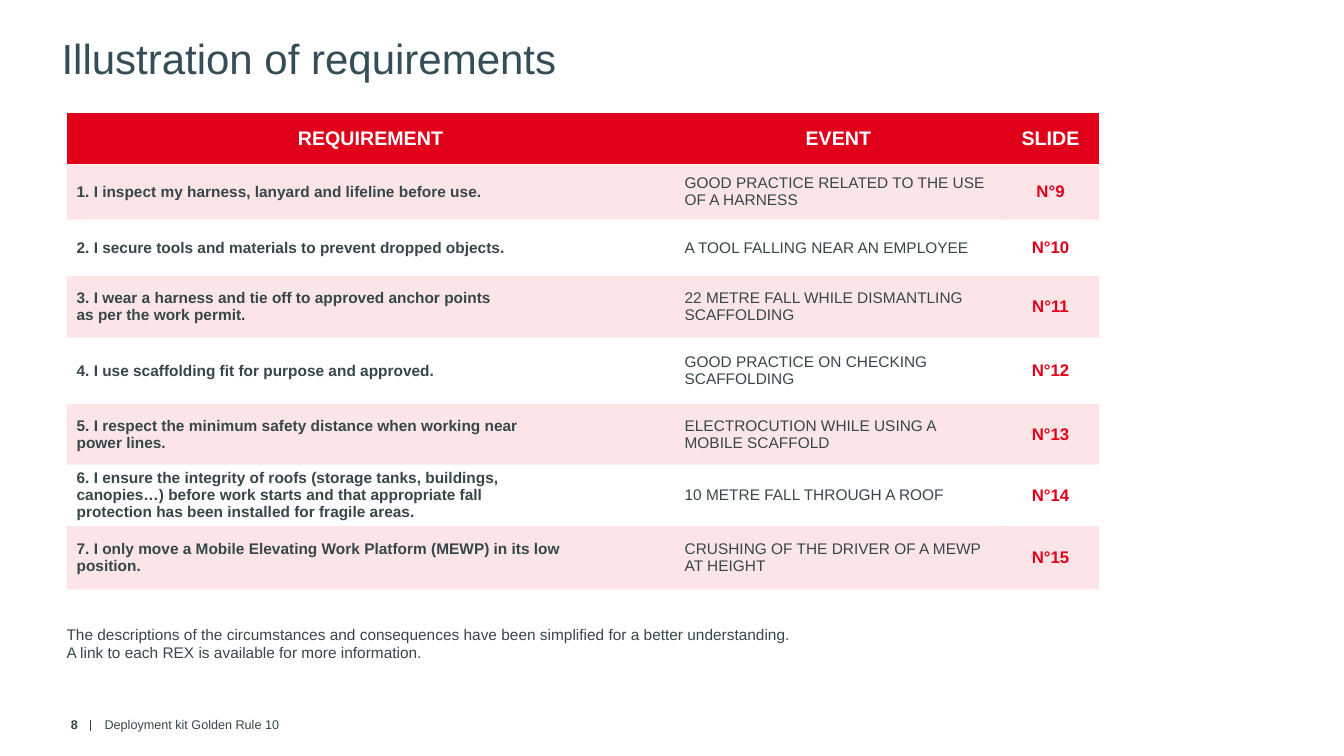
from dataclasses import dataclass

from lxml import etree
from pptx import Presentation, util as u
from pptx.dml.color import RGBColor
from pptx.enum import shapes, text
from pptx.oxml.ns import qn


@dataclass(frozen=True)
class Theme:
    """Colours, font and type sizes of the deck."""
    font: str = "Arial"
    red: str = "E1001A"
    ink: str = "374649"
    heading: str = "354D56"
    white: str = "FFFFFF"
    title: int = 30
    header: int = 14
    number: int = 12
    body: int = 11
    footer: int = 9
    tint: int = 10
    plain_table: str = "{2D5ABB26-0587-4C30-8999-92F81FD0307C}"


class SlideBuilder:
    """Draws styled elements on a slide, placed in percent of its size."""

    def __init__(self, prs, theme):
        """Add a title-only slide to the presentation."""
        self.prs, self.theme = prs, theme
        self.slide = prs.slides.add_slide(prs.slide_layouts[5])

    def x(self, share):
        """Turn a percentage of the slide's width into a length."""
        return u.Emu(round(self.prs.slide_width * share / 100))

    def y(self, share):
        """Turn a percentage of the slide's height into a length."""
        return u.Emu(round(self.prs.slide_height * share / 100))

    def box(self, left, top, width, height):
        """Turn four percentages into a position and a size."""
        return self.x(left), self.y(top), self.x(width), self.y(height)

    def set_text(self, tf, words, size, color, bold=False, align="LEFT"):
        """Fill a text frame with one paragraph per line of words."""
        for i, line in enumerate(words.split("\n")):
            p = tf.add_paragraph() if i else tf.paragraphs[0]
            p.alignment = text.PP_ALIGN[align]
            r = p.add_run()
            r.text = line
            for name, value in {"name": self.theme.font, "size": u.Pt(size), "bold": bold}.items():
                setattr(r.font, name, value)
            r.font.color.rgb = RGBColor.from_string(color)

    def title(self, words, area):
        """Place and fill the title placeholder."""
        sp = self.slide.shapes.title
        for name, value in zip(("left", "top", "width", "height"), self.box(*area)):
            setattr(sp, name, value)
        tf = sp.text_frame
        tf.auto_size = text.MSO_AUTO_SIZE.NONE
        tf.vertical_anchor = text.MSO_ANCHOR.TOP
        self.set_text(tf, words, self.theme.title, self.theme.heading)

    def textbox(self, words, area, size, frame, **style):
        """Add a wrapped text box with the given frame settings."""
        tf = self.slide.shapes.add_textbox(*self.box(*area)).text_frame
        for name, value in {"word_wrap": True, **frame}.items():
            setattr(tf, name, value)
        self.set_text(tf, words, size, self.theme.ink, **style)

    def rule(self, x, top, bottom):
        """Add a thin vertical line."""
        line = self.slide.shapes.add_connector(
            shapes.MSO_CONNECTOR.STRAIGHT, self.x(x), self.y(top), self.x(x), self.y(bottom))
        line.line.width = u.Pt(1)
        line.line.color.rgb = RGBColor.from_string(self.theme.ink)
        etree.SubElement(line._element.spPr, qn("a:effectLst"))

    def fill(self, cell, color, opacity=100):
        """Fill a table cell, with an opacity in percent."""
        cell.fill.solid()
        cell.fill.fore_color.rgb = RGBColor.from_string(color)
        if opacity < 100:
            clr = cell._tc.tcPr.find(".//" + qn("a:srgbClr"))
            etree.SubElement(clr, qn("a:alpha"), val=str(opacity * 1000))

    def table(self, rows, left, top, widths, heights):
        """Add a table with a red header and tinted alternate rows."""
        t = self.theme
        area = self.box(left, top, sum(widths), sum(heights))
        tbl = self.slide.shapes.add_table(len(rows), len(widths), *area).table
        tbl.horz_banding = False
        tbl._tbl.tblPr.find(qn("a:tableStyleId")).text = t.plain_table
        for col, width in zip(tbl.columns, widths):
            col.width = self.x(width)
        for row, height in zip(tbl.rows, heights):
            row.height = self.y(height)
        head = (t.header, t.white, True, "CENTER")
        columns = ((t.body, t.ink, True), (t.body, t.ink), (t.number, t.red, True, "CENTER"))
        for i, row in enumerate(rows):
            for j, words in enumerate(row):
                cell = tbl.cell(i, j)
                cell.vertical_anchor = text.MSO_ANCHOR.MIDDLE
                self.set_text(cell.text_frame, words, *(columns[j] if i else head))
                if i and i % 2 == 0:
                    self.fill(cell, t.white)
                else:
                    self.fill(cell, t.red, t.tint if i else 100)


REQUIREMENTS = [
    ("I inspect my harness, lanyard and lifeline before use.",
     "GOOD PRACTICE RELATED TO THE USE OF A HARNESS"),
    ("I secure tools and materials to prevent dropped objects.",
     "A TOOL FALLING NEAR AN EMPLOYEE"),
    ("I wear a harness and tie off to approved anchor points\nas per the work permit.",
     "22 METRE FALL WHILE DISMANTLING SCAFFOLDING"),
    ("I use scaffolding fit for purpose and approved.",
     "GOOD PRACTICE ON CHECKING SCAFFOLDING"),
    ("I respect the minimum safety distance when working near\npower lines.",
     "ELECTROCUTION WHILE USING A MOBILE SCAFFOLD"),
    ("I ensure the integrity of roofs (storage tanks, buildings,\n"
     "canopies…) before work starts and that appropriate fall\n"
     "protection has been installed for fragile areas.",
     "10 METRE FALL THROUGH A ROOF"),
    ("I only move a Mobile Elevating Work Platform (MEWP) in its low\nposition.",
     "CRUSHING OF THE DRIVER OF A MEWP AT HEIGHT"),
]
NOTE = ("The descriptions of the circumstances and consequences have been simplified "
        "for a better understanding.\n"
        "A link to each REX is available for more information.")


def main():
    """Build the requirements slide and save it."""
    prs = Presentation()
    prs.slide_width, prs.slide_height = u.Inches(13.33), u.Inches(7.5)
    theme = Theme()
    s = SlideBuilder(prs, theme)
    margin, text_width = 4.95, 79.74
    s.title("Illustration of requirements", (3.83, 3.6, text_width, 14.67))
    rows = [("REQUIREMENT", "EVENT", "SLIDE")]
    rows += [(f"{n}. {rule}", event, f"N°{n + 8}")
             for n, (rule, event) in enumerate(REQUIREMENTS, 1)]
    s.table(rows, margin, 14.93, (45.24, 24.38, 7.2),
            (6.8, 7.33, 7.47, 8.13, 8.8, 8, 7.6, 8.4))
    insets = dict.fromkeys(("margin_left", "margin_top", "margin_right", "margin_bottom"), 0)
    s.textbox(NOTE, (margin, 82.67, text_width, 4.93), theme.body,
              {**insets, "auto_size": text.MSO_AUTO_SIZE.SHAPE_TO_FIT_TEXT})
    middle = {"vertical_anchor": text.MSO_ANCHOR.MIDDLE}
    s.textbox("8", (1.8, 94, 4.73, 3.73), theme.footer, middle, bold=True, align="RIGHT")
    s.rule(6.75, 95.2, 96.67)
    s.textbox("Deployment kit Golden Rule 10", (7.05, 94, 29.56, 3.73), theme.footer, middle)
    prs.save("out.pptx")


if __name__ == "__main__":
    main()
